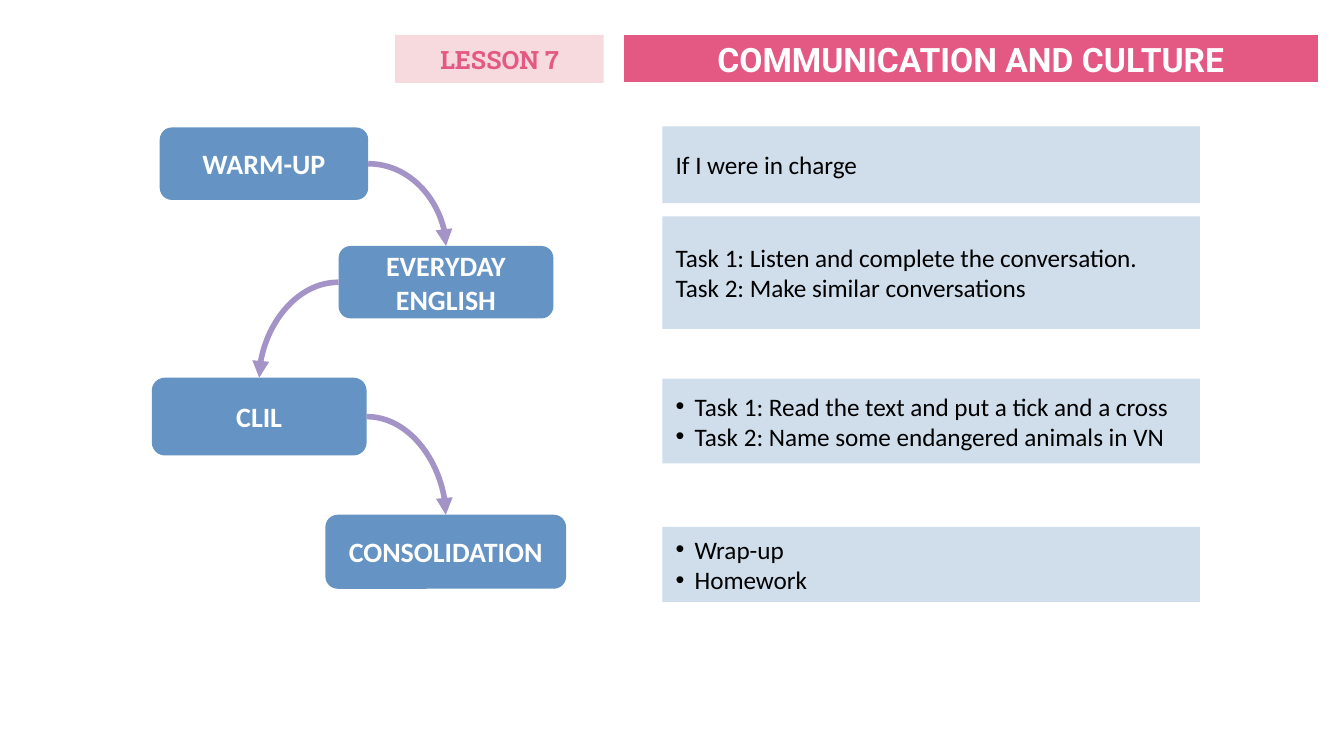
"""Build the lesson overview slide with its four stages and their tasks."""

from itertools import pairwise

from lxml.etree import SubElement
from pptx import Presentation
from pptx.dml.color import RGBColor
from pptx.enum.shapes import MSO_CONNECTOR, MSO_SHAPE
from pptx.enum.text import MSO_ANCHOR, MSO_AUTO_SIZE, PP_ALIGN
from pptx.oxml.ns import qn
from pptx.util import Cm, Pt

COLORS = {
    "pink": "E45983",
    "blush": "F7DADE",
    "blue": "6593C3",
    "pale": "D0DEEC",
    "violet": "A493C6",
    "white": "FFFFFF",
    "black": "000000",
}


def color(name):
    return RGBColor.from_string(COLORS[name])


def dress(box, lines, fill, ink, font, size, bold=True, align=PP_ALIGN.CENTER):
    box.fill.solid()
    box.fill.fore_color.rgb = color(fill)
    frame = box.text_frame
    frame.word_wrap = True
    frame.auto_size = MSO_AUTO_SIZE.NONE
    frame.vertical_anchor = MSO_ANCHOR.MIDDLE
    frame.text = "\n".join(lines)
    for para in frame.paragraphs:
        para.alignment = align
        para.font.name = font
        para.font.size = Pt(size)
        para.font.bold = bold
        para.font.color.rgb = color(ink)


deck = Presentation()
deck.slide_width, deck.slide_height = Cm(25.4), Cm(14.29)
page = deck.slides.add_slide(deck.slide_layouts[5])

title = page.shapes.title
title.left, title.top, title.width, title.height = Cm(11.76), Cm(0.64), Cm(13.18), Cm(0.94)
dress(title, ["COMMUNICATION AND CULTURE"], "pink", "white", "Roboto", 18)
title.line.color.rgb = color("white")
title.line.width = Pt(1.5)

lesson = page.shapes.add_shape(MSO_SHAPE.RECTANGLE, Cm(7.47), Cm(0.66), Cm(3.94), Cm(0.91))
lesson.shadow.inherit = False
lesson.line.fill.background()
dress(lesson, ["LESSON 7"], "blush", "pink", "Roboto Slab", 13.5)

stages = [
    ("WARM-UP", 3.02, 2.41, 3.94, 1.37),
    ("EVERYDAY ENGLISH", 6.4, 4.65, 4.06, 1.37),
    ("CLIL", 2.87, 7.14, 4.06, 1.47),
    ("CONSOLIDATION", 6.15, 9.73, 4.55, 1.4),
]
stage_boxes = []
for name, *place in stages:
    box = page.shapes.add_shape(MSO_SHAPE.ROUNDED_RECTANGLE, *map(Cm, place))
    box.shadow.inherit = False
    box.line.fill.background()
    dress(box, [name], "blue", "white", "Calibri", 15)
    stage_boxes.append(box)

task_groups = [
    (2.39, 1.45, False, ["If I were in charge"]),
    (4.09, 2.13, False, ["Task 1: Listen and complete the conversation.",
                         "Task 2: Make similar conversations"]),
    (7.16, 1.6, True, ["Task 1: Read the text and put a tick and a cross",
                       "Task 2: Name some endangered animals in VN"]),
    (9.96, 1.42, True, ["Wrap-up", "Homework"]),
]
for top, height, bulleted, lines in task_groups:
    box = page.shapes.add_shape(MSO_SHAPE.RECTANGLE, Cm(12.52), Cm(top), Cm(10.16), Cm(height))
    box.shadow.inherit = False
    box.line.fill.background()
    dress(box, lines, "pale", "black", "Calibri", 13.5, False, PP_ALIGN.LEFT)
    if bulleted:
        for para in box.text_frame.paragraphs:
            settings = para._p.get_or_add_pPr()
            settings.set("marL", str(Cm(0.36)))
            settings.set("indent", str(-Cm(0.36)))
            bullet_font = settings.makeelement(qn("a:buFont"), {"typeface": "Arial"})
            bullet = settings.makeelement(qn("a:buChar"), {"char": "•"})
            settings.insert(0, bullet_font)
            settings.insert(1, bullet)

for start, end in pairwise(stage_boxes):
    arrow = page.shapes.add_connector(MSO_CONNECTOR.CURVE, 0, 0, 0, 0)
    arrow.begin_connect(start, 3 if start.left < end.left else 1)
    arrow.end_connect(end, 0)
    arrow.line.color.rgb = color("violet")
    arrow.line.width = Pt(3)
    properties = arrow._element.spPr
    properties.find(qn("a:prstGeom")).set("prst", "curvedConnector2")
    SubElement(properties.find(qn("a:ln")), qn("a:tailEnd"), type="triangle")
    SubElement(properties, qn("a:effectLst"))

deck.save("out.pptx")
